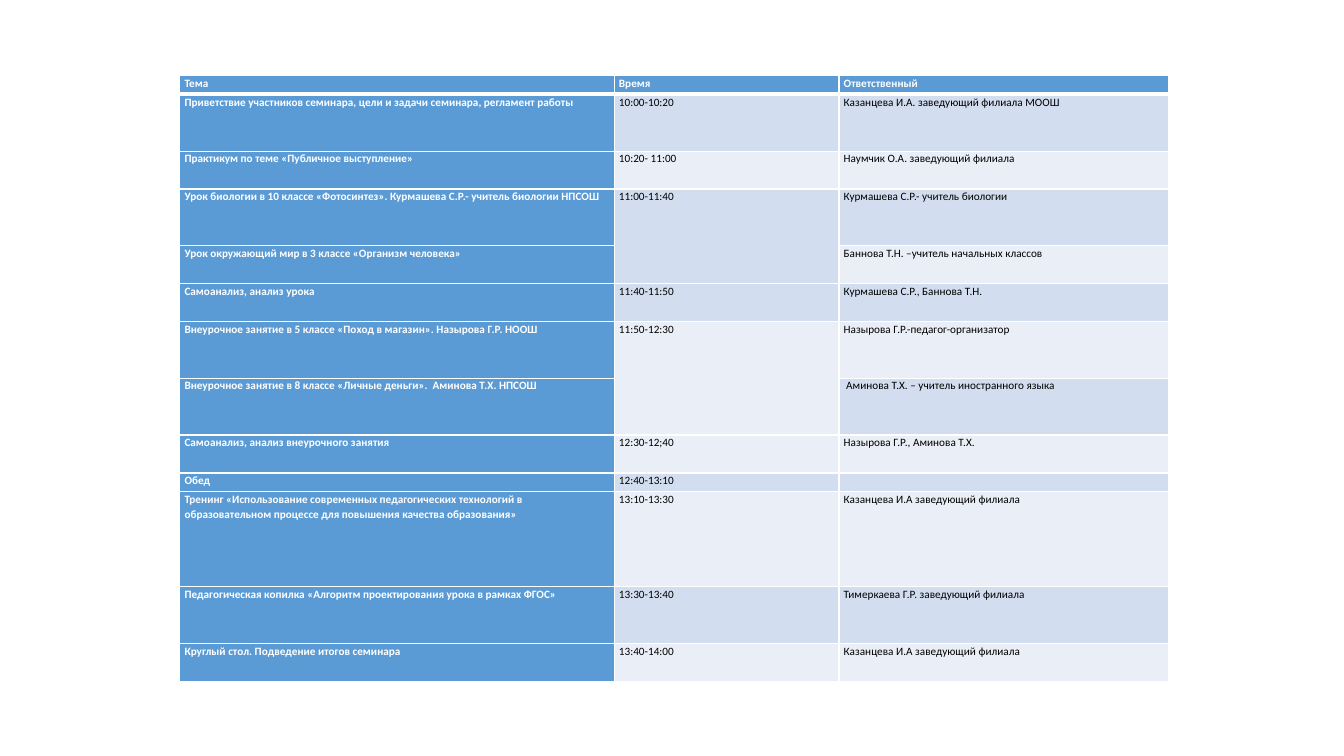
from lxml import etree
from pptx import Presentation
from pptx import util as u
from pptx.dml.color import RGBColor
from pptx.oxml.ns import qn

WHITE = RGBColor(0xFF, 0xFF, 0xFF)
BLACK = RGBColor(0, 0, 0)
BLUE = RGBColor(0x5B, 0x9B, 0xD5)
BANDS = (RGBColor(0xEA, 0xEF, 0xF7), RGBColor(0xD2, 0xDE, 0xEF))
FONT = "Calibri"
FONT_SIZE = 8

COLUMN_SHARES = (4.31, 2.23, 3.27)
SCHEDULE = [
    (1, "Тема", "Время", "Ответственный"),
    (3, "Приветствие участников семинара, цели и задачи семинара, регламент работы",
     "10:00-10:20", "Казанцева И.А. заведующий филиала МООШ"),
    (2, "Практикум по теме «Публичное выступление»",
     "10:20- 11:00", "Наумчик О.А. заведующий филиала"),
    (3, "Урок биологии в 10 классе «Фотосинтез». Курмашева С.Р.- учитель биологии НПСОШ",
     "11:00-11:40", "Курмашева С.Р.- учитель биологии"),
    (2, "Урок окружающий мир в 3 классе «Организм человека»",
     None, "Баннова Т.Н. –учитель начальных классов"),
    (2, "Самоанализ, анализ урока",
     "11:40-11:50", "Курмашева С.Р., Баннова Т.Н."),
    (3, "Внеурочное занятие в 5 классе «Поход в магазин». Назырова Г.Р. НООШ",
     "11:50-12:30", "Назырова Г.Р.-педагог-организатор"),
    (3, "Внеурочное занятие в 8 классе «Личные деньги».  Аминова Т.Х. НПСОШ",
     None, " Аминова Т.Х. – учитель иностранного языка"),
    (2, "Самоанализ, анализ внеурочного занятия",
     "12:30-12;40", "Назырова Г.Р., Аминова Т.Х."),
    (1, "Обед", "12:40-13:10", ""),
    (5, "Тренинг «Использование современных педагогических технологий в "
        "образовательном процессе для повышения качества образования»",
     "13:10-13:30", "Казанцева И.А заведующий филиала"),
    (3, "Педагогическая копилка «Алгоритм проектирования урока в рамках ФГОС»",
     "13:30-13:40", "Тимеркаева Г.Р. заведующий филиала"),
    (2, "Круглый стол. Подведение итогов семинара",
     "13:40-14:00", "Казанцева И.А заведующий филиала"),
]


def write_text(frame, content, color=BLACK, bold=False, size=FONT_SIZE):
    """Write one paragraph in the given format."""
    paragraph = frame.paragraphs[0]
    paragraph.line_spacing = 1.07
    if not content:
        etree.SubElement(paragraph._p, qn("a:endParaRPr"), sz=str(size * 100))
        return
    run = paragraph.add_run()
    run.text = content
    run.font.name = FONT
    run.font.size = u.Pt(size)
    run.font.bold = bold
    run.font.color.rgb = color


def set_borders(cell, **widths):
    """Draw white borders of the given widths in points on a cell."""
    properties = cell._tc.get_or_add_tcPr()
    for side in "LRTB":
        width = u.Pt(widths.get(side, 1))
        line = etree.SubElement(properties, qn(f"a:ln{side}"), w=str(width))
        fill = etree.SubElement(line, qn("a:solidFill"))
        etree.SubElement(fill, qn("a:srgbClr"), val=str(WHITE))


def format_cell(cell, row, column):
    """Set the margins, borders and fill of a cell by its place."""
    cell.margin_left = cell.margin_right = u.Cm(0.12)
    cell.margin_top = cell.margin_bottom = 0
    set_borders(cell, T=3 if row == 1 else 1, B=3 if row == 0 else 1)
    cell.fill.solid()
    cell.fill.fore_color.rgb = BLUE if row == 0 or column == 0 else BANDS[row % 2]


def add_schedule(slide, left, top, width, height):
    """Place the seminar schedule in the given box."""
    table = slide.shapes.add_table(
        len(SCHEDULE), len(COLUMN_SHARES), left, top, width, height).table
    table.first_col = True
    for column, share in zip(table.columns, COLUMN_SHARES):
        column.width = int(width * share / sum(COLUMN_SHARES))
    total_lines = sum(entry[0] for entry in SCHEDULE)
    for row, (lines, *texts) in enumerate(SCHEDULE):
        table.rows[row].height = int(height * lines / total_lines)
        for column, content in enumerate(texts):
            cell = table.cell(row, column)
            format_cell(cell, row, column)
            if content is None:
                table.cell(row - 1, column).merge(cell)
                continue
            heading = row == 0 or column == 0
            write_text(cell.text_frame, content,
                       color=WHITE if heading else BLACK, bold=heading)


def main():
    """Build and save the presentation."""
    presentation = Presentation()
    presentation.slide_width = u.Cm(33.87)
    presentation.slide_height = u.Cm(19.05)
    slide = presentation.slides.add_slide(presentation.slide_layouts[6])
    add_schedule(slide, u.Cm(4.53), u.Cm(1.9), u.Cm(24.92), u.Cm(15.27))
    presentation.save("out.pptx")


if __name__ == "__main__":
    main()
